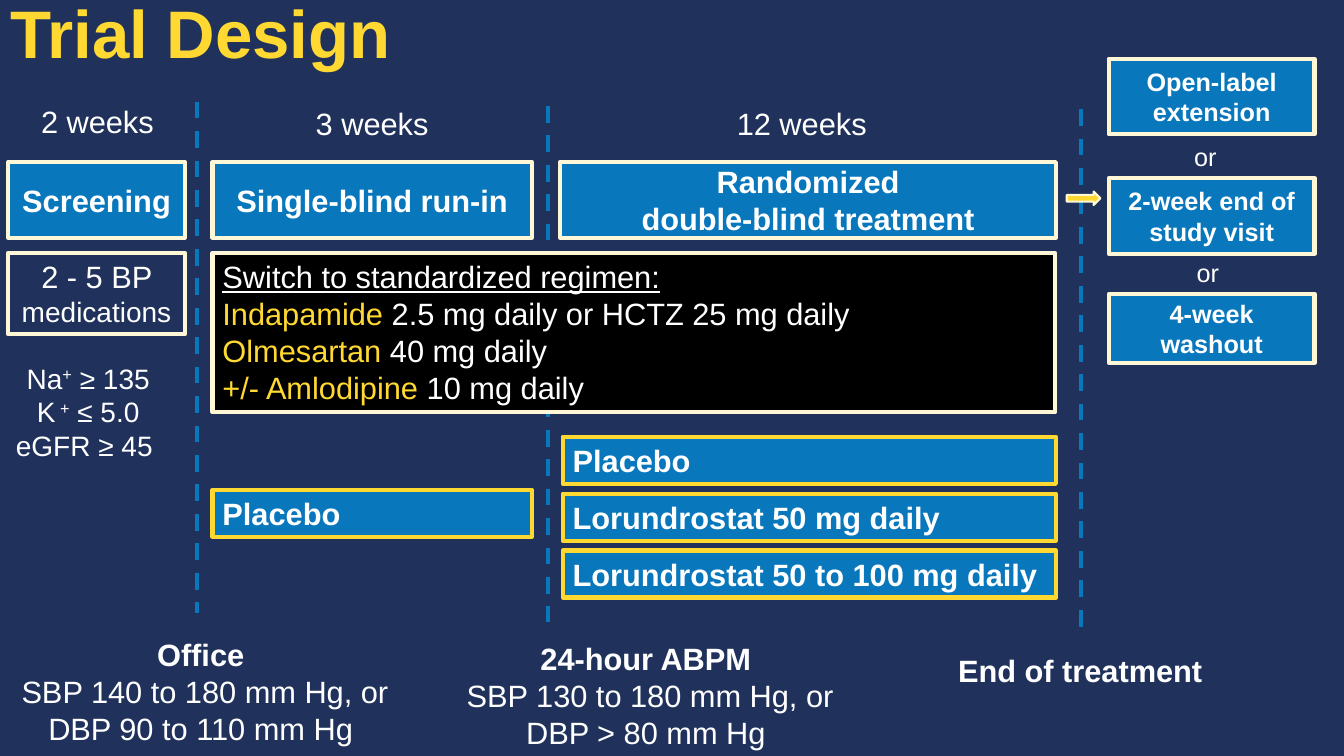
from dataclasses import dataclass

from lxml.etree import SubElement
from pptx import Presentation
from pptx.dml.color import RGBColor
from pptx.enum.dml import MSO_LINE
from pptx.enum.shapes import MSO_CONNECTOR, MSO_SHAPE
from pptx.enum.text import MSO_ANCHOR, MSO_AUTO_SIZE, PP_ALIGN
from pptx.oxml.ns import qn
from pptx.util import Inches, Pt


@dataclass(frozen=True)
class Theme:
    """Colours, font and type sizes of the slide."""
    navy: str = "20325C"
    blue: str = "0877BC"
    cream: str = "FFF7D6"
    gold: str = "FFD932"
    white: str = "FFFFFF"
    black: str = "000000"
    font: str = "Arial"
    title: int = 48
    main: int = 22
    list: int = 20
    side: int = 18


THEME = Theme()
COLS, ROWS = 160, 90


def write(shape, paras, size=THEME.main, color=THEME.white, bold=False,
          align=PP_ALIGN.CENTER, middle=False, grow=True, space=1.0):
    """Fill a shape with paragraphs, each a list of (text, format) runs."""
    frame = shape.text_frame
    frame.word_wrap = True
    frame.auto_size = MSO_AUTO_SIZE.SHAPE_TO_FIT_TEXT if grow else MSO_AUTO_SIZE.NONE
    frame.vertical_anchor = MSO_ANCHOR.MIDDLE if middle else MSO_ANCHOR.TOP
    for index, runs in enumerate(paras):
        para = frame.paragraphs[0] if index == 0 else frame.add_paragraph()
        para.alignment, para.line_spacing = align, space
        para.space_before = Pt(0)
        for text, form in runs:
            run = para.add_run()
            run.text = text
            font = run.font
            font.name, font.size = THEME.font, Pt(form.get("size", size))
            font.bold = form.get("bold", bold)
            font.color.rgb = RGBColor.from_string(form.get("color", color))
            if form.get("under"):
                font.underline = True
            if form.get("raised"):
                run._r.get_or_add_rPr().set("baseline", "30000")


def plain(*lines):
    """Turn strings into paragraphs of one run each."""
    return [[(line, {})] for line in lines]


class Board:
    """Draws elements on one slide, measured in grid columns and rows."""

    def __init__(self, deck, theme):
        """Add a slide with the theme's background."""
        self.theme = theme
        self.wide = deck.slide_width / COLS
        self.high = deck.slide_height / ROWS
        self.slide = deck.slides.add_slide(deck.slide_layouts[1])
        fill = self.slide.background.fill
        fill.solid()
        fill.fore_color.rgb = RGBColor.from_string(theme.navy)

    def place(self, col, row, cols, rows):
        """Turn grid units into slide lengths."""
        return (round(col * self.wide), round(row * self.high),
                round(cols * self.wide), round(rows * self.high))

    def move(self, shape, spot):
        """Put a placeholder on the grid."""
        shape.left, shape.top, shape.width, shape.height = self.place(*spot)

    def title(self, spot, text):
        """Write the slide title."""
        shape = self.slide.shapes.title
        self.move(shape, spot)
        write(shape, plain(text), size=self.theme.title, color=self.theme.gold,
              bold=True, align=PP_ALIGN.LEFT, middle=True, grow=False, space=0.9)

    def list(self, spot, paras):
        """Write the body list without bullets."""
        shape = self.slide.placeholders[1]
        self.move(shape, spot)
        write(shape, paras, size=self.theme.list)
        for para in shape.text_frame.paragraphs:
            props = para._p.get_or_add_pPr()
            props.set("marL", "0")
            props.set("indent", "0")
            SubElement(props, qn("a:buNone"))

    def shape(self, spot, fill, edge, weight=3, kind=MSO_SHAPE.RECTANGLE):
        """Add a preset shape with a fill and an outline."""
        shape = self.slide.shapes.add_shape(kind, *self.place(*spot))
        shape.shadow.inherit = False
        if fill:
            shape.fill.solid()
            shape.fill.fore_color.rgb = RGBColor.from_string(fill)
        else:
            shape.fill.background()
        shape.line.color.rgb = RGBColor.from_string(edge)
        shape.line.width = Pt(weight)
        return shape

    def phase(self, spot, *lines, **form):
        """Add a blue box with centred bold text."""
        box = self.shape(spot, self.theme.blue, self.theme.cream)
        write(box, plain(*lines), bold=True, middle=True, grow=False, **form)

    def arm(self, spot, text):
        """Add a gold-edged treatment bar."""
        bar = self.shape(spot, self.theme.blue, self.theme.gold)
        write(bar, plain(text), bold=True, align=PP_ALIGN.LEFT)

    def label(self, spot, paras, **form):
        """Add a free text box."""
        write(self.slide.shapes.add_textbox(*self.place(*spot)), paras, **form)

    def divide(self, col, top, end):
        """Add a dashed upright line."""
        left, start, _, stop = self.place(col, top, 0, end)
        line = self.slide.shapes.add_connector(
            MSO_CONNECTOR.STRAIGHT, left, start, left, stop)
        line.line.color.rgb = RGBColor.from_string(self.theme.blue)
        line.line.width = Pt(3)
        line.line.dash_style = MSO_LINE.DASH
        SubElement(line.element.spPr, qn("a:effectLst"))


def main():
    """Build the trial design slide."""
    deck = Presentation()
    deck.slide_width, deck.slide_height = Inches(13.33), Inches(7.5)
    board = Board(deck, THEME)
    gold, bold = {"color": THEME.gold}, {"bold": True}
    raised = {"raised": True}

    board.title((0, 0.7, COLS, 7.3), "Trial Design")
    board.list((0, 42.4, 21, 13.3), [
        [("Na", {}), ("+", raised), (" ≥ 135", {})],
        [("K", {}), (" +", raised), (" ≤ 5.0", {})],
        [("eGFR ≥ 45 ", {})]])

    for col, top, end in ((23.5, 12.1, 73), (65.2, 12.6, 74), (128.7, 13, 75.1)):
        board.divide(col, top, end)

    for col, cols, lines in (
            (1, 21, ["Screening"]),
            (25.3, 38, ["Single-blind run-in"]),
            (66.7, 59, ["Randomized", "double-blind treatment"])):
        board.phase((col, 19.3, cols, 9), *lines)
    for col, row, cols, text in ((1.1, 11.6, 21, "2 weeks"),
                                 (25.3, 11.9, 38, "3 weeks"),
                                 (66.6, 11.9, 57.7, "12 weeks")):
        board.label((col, row, cols, 5.6), plain(text))

    intake = board.shape((1, 30.1, 21, 9.7), None, THEME.cream)
    write(intake, [[("2 - 5 BP ", {}), ("medications", {"size": THEME.list})]])
    switch = board.shape((25.3, 30.1, 100.3, 19), THEME.black, THEME.cream)
    write(switch, [
        [("Switch to standardized regimen:", {"under": True})],
        [("Indapamide", gold), (" 2.5 mg daily or HCTZ 25 mg daily", {})],
        [("Olmesartan", gold), (" 40 mg daily", {})],
        [("+/- Amlodipine ", gold), ("10 mg daily", {})]], align=PP_ALIGN.LEFT)

    board.arm((25.3, 58.3, 38, 5.6), "Placebo")
    for step, text in enumerate(("Placebo", "Lorundrostat 50 mg daily",
                                 "Lorundrostat 50 to 100 mg daily")):
        board.arm((67, 52 + 6.77 * step, 58.7, 5.6), text)

    board.shape((127, 22.8, 4, 1.6), THEME.gold, THEME.cream, 1.5,
                MSO_SHAPE.RIGHT_ARROW)
    for row, rows, text in ((7, 9, "Open-label extension"),
                            (21.2, 9, "2-week end of study visit"),
                            (35, 8.2, "4-week washout")):
        board.phase((132, row, 24.5, rows), text, size=THEME.side)
    for col, row in ((140, 16.2), (140.3, 30.1)):
        board.label((col, row, 7, 4.8), plain("or"), size=THEME.side)

    for col, row, head, lines in (
            (1, 75.1, "Office ",
             ("SBP 140 to 180 mm Hg, or ", "DBP 90 to 110 mm Hg ")),
            (54, 75.6, "24-hour ABPM ",
             ("SBP 130 to 180 mm Hg, or ", "DBP > 80 mm Hg ")),
            (105.2, 77, "End of treatment", ())):
        paras = [[(head, bold)]] + plain(*lines)
        board.label((col, row, 46.8, 1.1 + 4.45 * len(paras)), paras)

    deck.save("out.pptx")


if __name__ == "__main__":
    main()
